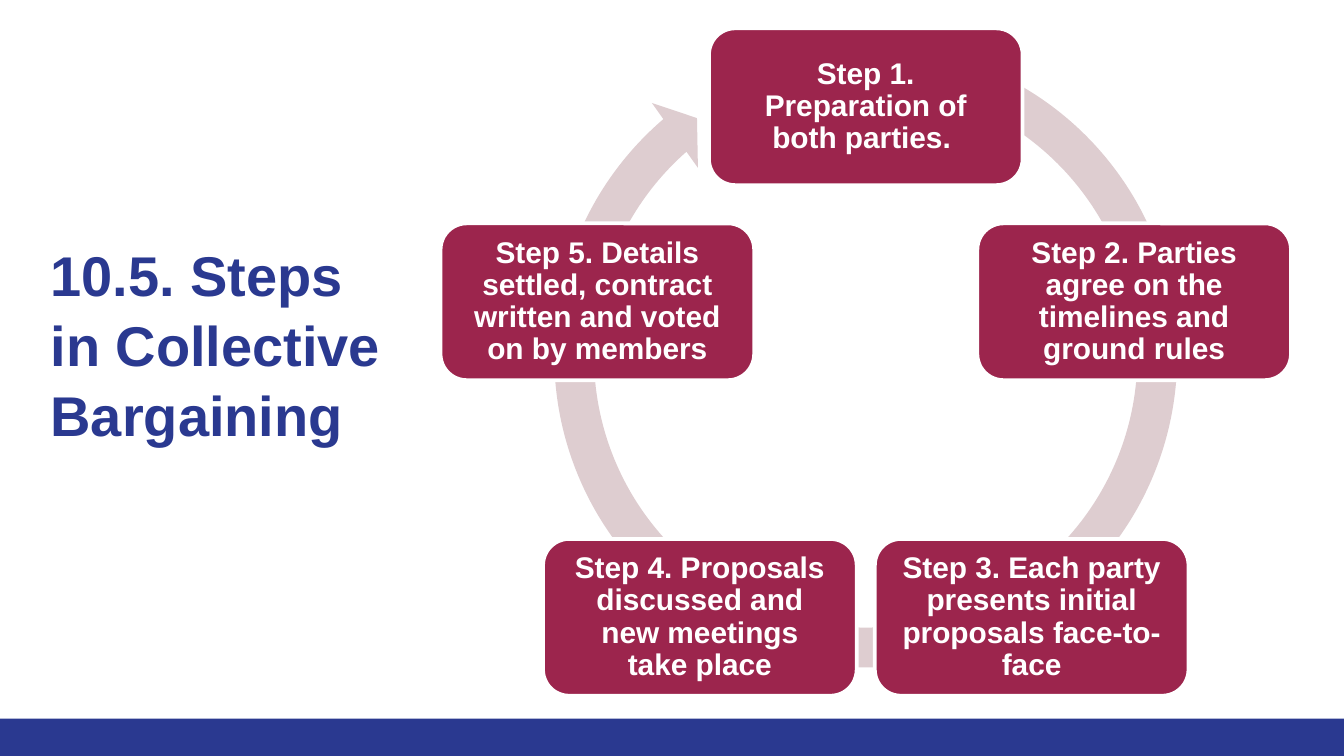
from math import cos, radians, sin

from pptx import Presentation
from pptx.dml.color import RGBColor
from pptx.enum.shapes import MSO_SHAPE
from pptx.enum.text import MSO_ANCHOR, PP_ALIGN
from pptx.util import Pt

NAVY = RGBColor(0x2A, 0x39, 0x90)
MAROON = RGBColor(0x9C, 0x25, 0x4D)
ROSE = RGBColor(0xDE, 0xCD, 0xD0)
WHITE = RGBColor(0xFF, 0xFF, 0xFF)

SLIDE_WIDTH, SLIDE_HEIGHT = 720, 405
STEPS = [
    "Step 1. Preparation of both parties. ",
    "Step 2. Parties agree on the timelines and ground rules",
    "Step 3. Each party presents initial proposals face-to-face",
    "Step 4. Proposals discussed and new meetings take place",
    "Step 5. Details settled, contract written and voted on by members",
]


def add_filled(slide, preset, left, top, width, height, fill):
    shape = slide.shapes.add_shape(preset, Pt(left), Pt(top), Pt(width), Pt(height))
    shape.shadow.inherit = False
    shape.fill.solid()
    shape.fill.fore_color.rgb = fill
    shape.line.fill.background()
    return shape


def write(frame, text, size, color, margin):
    frame.word_wrap = True
    frame.margin_left = frame.margin_right = Pt(margin)
    frame.margin_top = frame.margin_bottom = Pt(margin)
    paragraph = frame.paragraphs[0]
    run = paragraph.add_run()
    run.text = text
    run.font.name = "Arial"
    run.font.size = Pt(size)
    run.font.bold = True
    run.font.color.rgb = color
    return paragraph


def add_title(slide, left, top, width, height):
    title = slide.shapes.add_textbox(Pt(left), Pt(top), Pt(width), Pt(height))
    frame = title.text_frame
    heading = write(frame, "10.5. Steps in Collective Bargaining", 30, NAVY, 7.2)
    heading.line_spacing = 1.04
    frame.margin_top = Pt(8.5)
    frame.vertical_anchor = MSO_ANCHOR.TOP


def add_step(slide, left, top, width, height, text):
    step = add_filled(slide, MSO_SHAPE.ROUNDED_RECTANGLE, left, top, width, height, MAROON)
    step.line.color.rgb = WHITE
    step.line.width = Pt(2)
    paragraph = write(step.text_frame, text, 16, WHITE, 9)
    paragraph.alignment = PP_ALIGN.CENTER
    paragraph.line_spacing = 0.9
    step.text_frame.vertical_anchor = MSO_ANCHOR.MIDDLE


def add_cycle(slide, left, top, width):
    """Spread the steps clockwise from the top over a circular arrow."""
    step_width, step_height, radius, ring_size = 168, 84, 151.2, 355
    center_x = left + width / 2
    center_y = top + step_height / 2 + radius

    ring = add_filled(slide, MSO_SHAPE.CIRCULAR_ARROW, center_x - ring_size / 2,
                      top - 2, ring_size, ring_size, ROSE)
    for index, value in enumerate([0.06, 3.31, 137.48, 174.03, 0.06]):
        ring.adjustments[index] = value

    for index, text in enumerate(STEPS):
        angle = radians(index * 360 / len(STEPS))
        add_step(slide,
                 center_x + radius * sin(angle) - step_width / 2,
                 center_y - radius * cos(angle) - step_height / 2,
                 step_width, step_height, text)


def main():
    presentation = Presentation()
    presentation.slide_width = Pt(SLIDE_WIDTH)
    presentation.slide_height = Pt(SLIDE_HEIGHT)
    slide = presentation.slides.add_slide(presentation.slide_layouts[6])
    add_filled(slide, MSO_SHAPE.RECTANGLE, 0, 385, SLIDE_WIDTH, 20, NAVY)
    add_title(slide, 20, 119, 202, 182)
    add_cycle(slide, 236, 15.2, 455.6)
    presentation.save("out.pptx")


if __name__ == "__main__":
    main()
